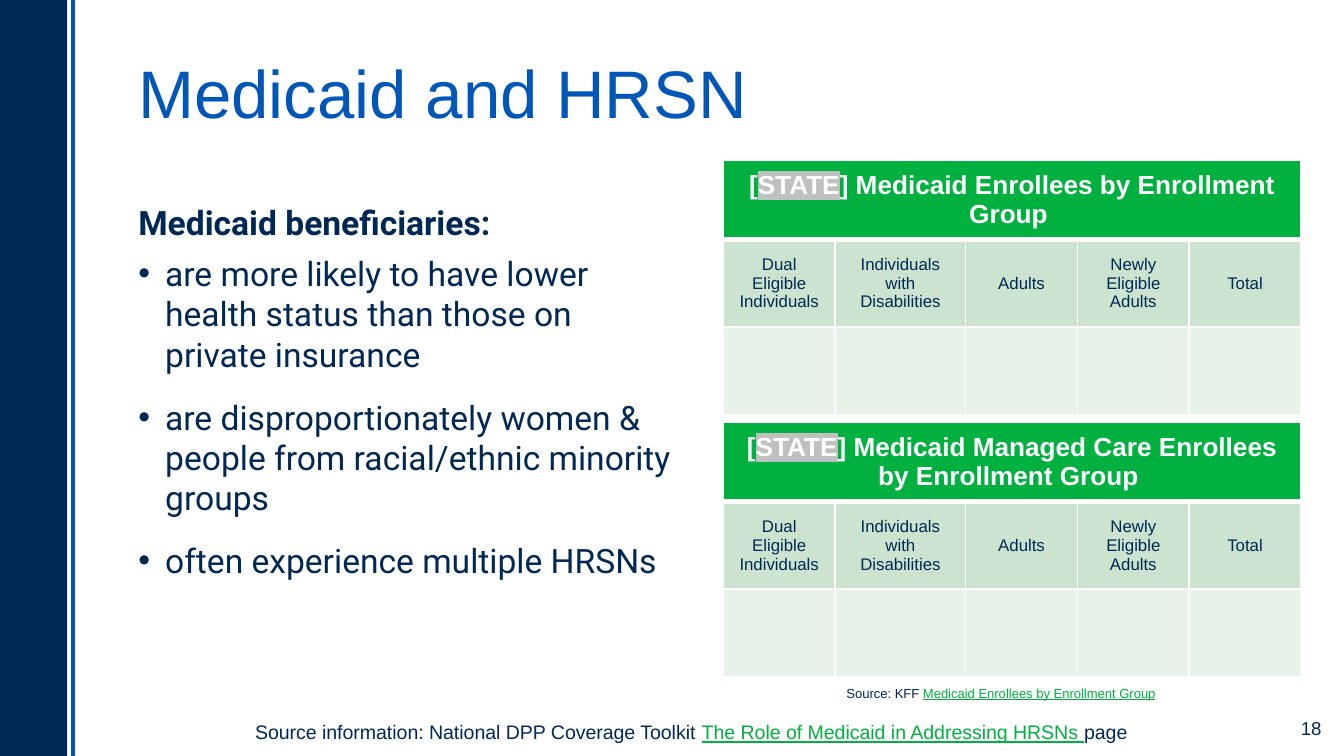
from lxml.etree import SubElement
from pptx import Presentation
from pptx.dml.color import RGBColor
from pptx.enum.shapes import MSO_CONNECTOR, MSO_SHAPE
from pptx.enum.text import MSO_ANCHOR, PP_ALIGN
from pptx.oxml import parse_xml
from pptx.oxml.ns import nsdecls, qn
from pptx.util import Pt

COLORS = {
    "navy": "002855", "blue": "0057B8", "green": "00B140", "white": "FFFFFF",
    "label": "CCE4CF", "value": "E7F2E8", "highlight": "C0C0C0",
}
GROUPS = ["Dual Eligible Individuals", "Individuals with Disabilities", "Adults",
          "Newly Eligible Adults", "Total"]
COLUMN_SHARES = [83, 97, 83, 83, 83]
ROW_HEIGHTS = [42.5, 46.8, 46.8]
BENEFITS = [
    "are more likely to have lower health status than those on private insurance",
    "are disproportionately women & people from racial/ethnic minority groups",
    "often experience multiple HRSNs",
]


def color(name):
    """Return the named palette colour."""
    return RGBColor.from_string(COLORS[name])


def add_span(para, text, tint="navy", **formats):
    """Add a run of text with the given font values."""
    span = para.add_run()
    span.text = text
    span.font.color.rgb = color(tint)
    for name, value in ({"name": "Arial"} | formats).items():
        setattr(span.font, name, value)
    return span


def highlight(span):
    """Shade the background of a run."""
    shade = parse_xml(f'<a:highlight {nsdecls("a")}><a:srgbClr val="{COLORS["highlight"]}"/></a:highlight>')
    span.font._element.find(qn("a:solidFill")).addnext(shade)


def add_text_box(page, box, anchor=MSO_ANCHOR.TOP, wrap=True):
    """Add an empty text box and return its text frame."""
    frame = page.shapes.add_textbox(*map(Pt, box)).text_frame
    frame.word_wrap = wrap
    frame.vertical_anchor = anchor
    return frame


def add_side_band(page, box):
    """Draw the navy band and the blue rule beside it."""
    left, top, width, height = box
    band = page.shapes.add_shape(MSO_SHAPE.RECTANGLE, *map(Pt, box))
    band.shadow.inherit = False
    band.fill.solid()
    band.fill.fore_color.rgb = color("navy")
    band.line.fill.background()
    rule_x = left + width + 2.9
    rule = page.shapes.add_connector(
        MSO_CONNECTOR.STRAIGHT, Pt(rule_x), Pt(top + height), Pt(rule_x), Pt(top))
    rule.line.color.rgb = color("blue")
    rule.line.width = Pt(2.25)
    SubElement(rule._element.spPr, qn("a:effectLst"))


def add_title(page, box):
    """Place the slide title."""
    frame = add_text_box(page, box, MSO_ANCHOR.BOTTOM)
    add_span(frame.paragraphs[0], "Medicaid and HRSN", "blue", size=Pt(36))


def add_benefits(page, box):
    """Place the lead line and its bulleted list."""
    frame = add_text_box(page, box)
    add_span(frame.paragraphs[0], "Medicaid beneficiaries:",
             name="Roboto", size=Pt(18), bold=True)
    for benefit in BENEFITS:
        para = frame.add_paragraph()
        properties = para._p.get_or_add_pPr()
        properties.set("marL", str(Pt(14.4)))
        properties.set("indent", str(-Pt(14.4)))
        SubElement(properties, qn("a:buFont"), typeface="Arial")
        SubElement(properties, qn("a:buChar"), char="•")
        para.space_before = para.space_after = Pt(6)
        add_span(para, benefit, name="Roboto", size=Pt(18))


def style_cell(cell, fill, bottom=1):
    """Fill a cell, centre its text and give it white borders."""
    cell.fill.solid()
    cell.fill.fore_color.rgb = color(fill)
    cell.vertical_anchor = MSO_ANCHOR.MIDDLE
    cell.text_frame.paragraphs[0].alignment = PP_ALIGN.CENTER
    properties = cell._tc.get_or_add_tcPr()
    widths = {"lnL": 1, "lnR": 1, "lnT": 1, "lnB": bottom}
    for position, (side, width) in enumerate(widths.items()):
        properties.insert(position, parse_xml(
            f'<a:{side} {nsdecls("a")} w="{Pt(width)}"><a:solidFill>'
            f'<a:srgbClr val="{COLORS["white"]}"/></a:solidFill></a:{side}>'))


def add_enrollment_table(page, box, heading):
    """Place one enrollment table with a merged heading row."""
    table = page.shapes.add_table(
        len(ROW_HEIGHTS), len(GROUPS), *map(Pt, box)).table
    for column, share in zip(table.columns, COLUMN_SHARES):
        column.width = Pt(box[2] * share / sum(COLUMN_SHARES))
    for row, height in zip(table.rows, ROW_HEIGHTS):
        row.height = Pt(height)
    for index, group in enumerate(GROUPS):
        style_cell(table.cell(0, index), "green", 3)
        style_cell(table.cell(1, index), "label")
        style_cell(table.cell(2, index), "value")
        add_span(table.cell(1, index).text_frame.paragraphs[0], group, size=Pt(9))
    title_cell = table.cell(0, 0)
    title_cell.merge(table.cell(0, len(GROUPS) - 1))
    para = title_cell.text_frame.paragraphs[0]
    formats = {"size": Pt(14), "bold": True}
    add_span(para, "[", "white", **formats)
    highlight(add_span(para, "STATE", "white", **formats))
    add_span(para, f"] {heading} ", "white", **formats)


def add_source(page, box, size, lead, link, tail=""):
    """Place a one-line source note with an underlined title."""
    para = add_text_box(page, box, wrap=False).paragraphs[0]
    add_span(para, lead, size=Pt(size))
    add_span(para, link, "green", size=Pt(size), underline=True)
    if tail:
        add_span(para, tail, size=Pt(size))


def add_page_number(page, box):
    """Place the slide number."""
    para = add_text_box(page, box, MSO_ANCHOR.MIDDLE).paragraphs[0]
    para.alignment = PP_ALIGN.RIGHT
    add_span(para, "18", size=Pt(10))


def main():
    """Build the slide and save the deck."""
    deck = Presentation()
    deck.slide_width, deck.slide_height = Pt(720), Pt(405)
    page = deck.slides.add_slide(deck.slide_layouts[6])
    add_side_band(page, (0, 0, 36, 405))
    add_page_number(page, (648, 379.5, 67, 21.6))
    add_title(page, (67, 15, 617, 59))
    add_benefits(page, (67, 104.4, 301, 245.5))
    add_source(page, (129.6, 382.3, 492.5, 20.2), 10.5,
               "Source information: National DPP Coverage Toolkit ",
               "The Role of Medicaid in Addressing HRSNs ", "page")
    headings = ["Medicaid Enrollees by Enrollment Group",
                "Medicaid Managed Care Enrollees by Enrollment Group"]
    for index, heading in enumerate(headings):
        box = (387.5, 85.9 + index * 140.4, 309.5, sum(ROW_HEIGHTS))
        add_enrollment_table(page, box, heading)
    add_source(page, (446.4, 363.6, 183, 15.8), 7,
               "Source: KFF ", "Medicaid Enrollees by Enrollment Group")
    deck.save("out.pptx")


if __name__ == "__main__":
    main()
